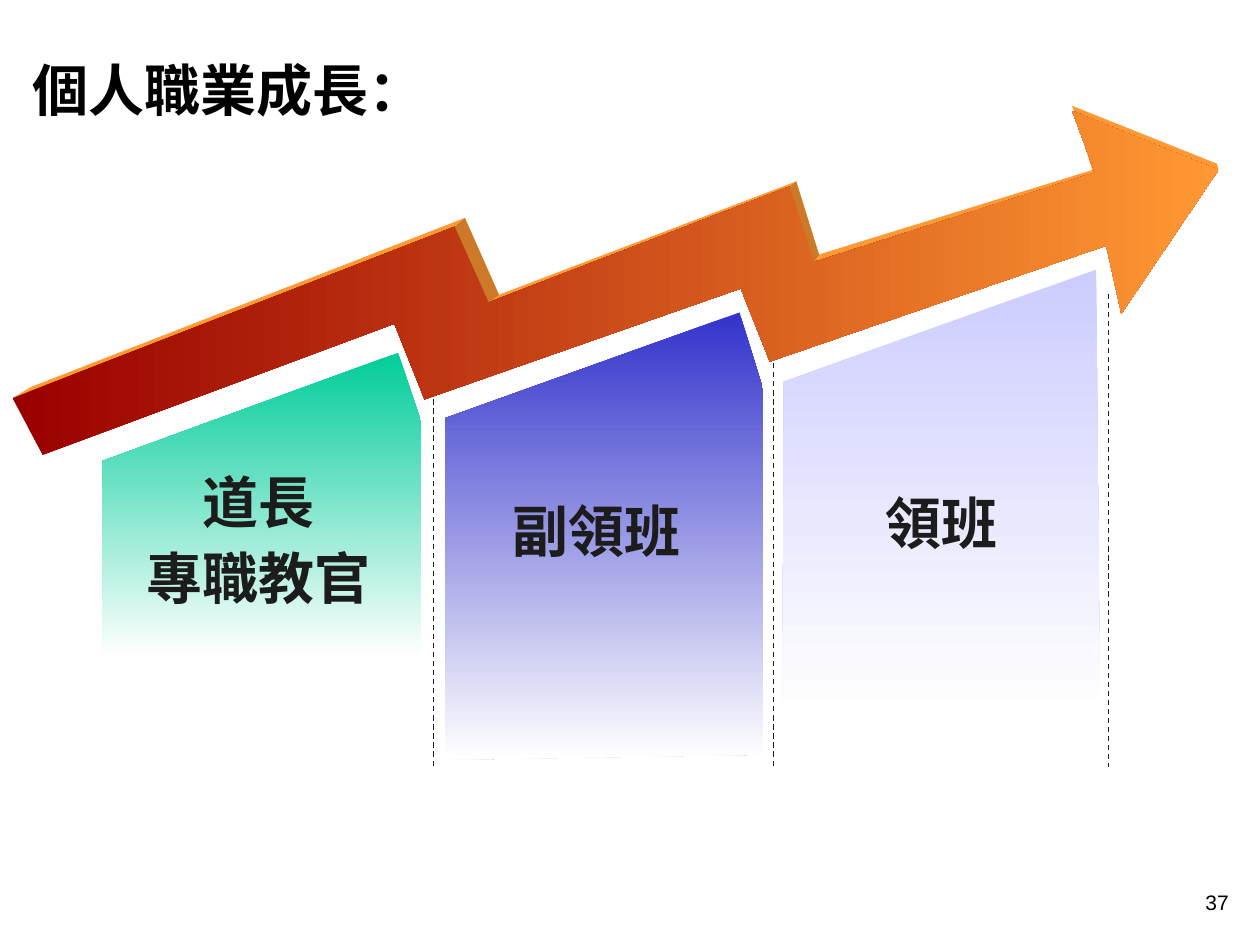
from dataclasses import dataclass

from lxml import etree
from pptx import Presentation
from pptx.dml.color import RGBColor
from pptx.enum.dml import MSO_LINE
from pptx.enum.shapes import MSO_CONNECTOR
from pptx.enum.text import MSO_ANCHOR, PP_ALIGN
from pptx.oxml.ns import qn
from pptx.util import Inches, Pt

DASH = MSO_LINE.DASH
STRAIGHT = MSO_CONNECTOR.STRAIGHT
TOP = MSO_ANCHOR.TOP
LEFT, CENTER = PP_ALIGN.LEFT, PP_ALIGN.CENTER
DOWN, RIGHT = 270, 0


@dataclass(frozen=True)
class Theme:
    font: str = "Arial"
    cjk: str = "Noto Sans CJK TC"
    big: int = 32
    small: int = 12
    black: str = "000000"
    ink: str = "1C1C1C"
    white: str = "FFFFFF"
    green: str = "00CC99"
    blue: str = "3333CC"
    pale: str = "CCCCFF"
    red: str = "990000"
    orange: str = "FF9933"
    brown: str = "CC7A29"


THEME = Theme()


def color(code):
    return RGBColor.from_string(code)


def write(frame, lines, font, size, ink, bold=True, align=LEFT, gap=0):
    frame.word_wrap = True
    frame.vertical_anchor = TOP
    frame.text = "\n".join(lines)
    for i, para in enumerate(frame.paragraphs):
        para.alignment = align
        para.space_before = Pt(gap if i else 0)
        para.font.name = font
        para.font.size = Pt(size)
        para.font.bold = bold
        para.font.color.rgb = color(ink)


def add_text(slide, box, lines, *style, **extra):
    shape = slide.shapes.add_textbox(*map(Inches, box))
    write(shape.text_frame, lines, *style, **extra)


def add_outline(slide, left, top, points, first, last=None, angle=DOWN):
    """Draw a closed outline; points are offsets from left and top."""
    spots = [(Inches(left + x), Inches(top + y)) for x, y in points]
    pen = slide.shapes.build_freeform(*spots[0])
    pen.add_line_segments(spots[1:], close=True)
    shape = pen.convert_to_shape()
    shape.shadow.inherit = False
    shape.line.fill.background()
    if last is None:
        shape.fill.solid()
        shape.fill.fore_color.rgb = color(first)
        return
    shape.fill.gradient()
    shape.fill.gradient_angle = angle
    for stop, code in zip(shape.fill.gradient_stops, (first, last)):
        stop.color.rgb = color(code)


def add_title(slide, box, text):
    title = slide.shapes.title
    title.left, title.top, title.width, title.height = map(Inches, box)
    write(title.text_frame, [text], THEME.font, THEME.big, THEME.black)


def add_stage(slide, left, top, points, tint, label, lines, align=LEFT):
    """Draw one fading panel; label is a box offset from its corner."""
    add_outline(slide, left, top, points, tint, THEME.white)
    x, y, width, height = label
    add_text(slide, (left + x, top + y, width, height), lines,
             THEME.cjk, THEME.big, THEME.ink, align=align, gap=5)


def add_rule(slide, x, top, end):
    rule = slide.shapes.add_connector(
        STRAIGHT, Inches(x), Inches(top), Inches(x), Inches(end))
    rule.line.color.rgb = color(THEME.ink)
    rule.line.width = Pt(0.75)
    rule.line.dash_style = DASH
    etree.SubElement(rule._element.spPr, qn("a:effectLst"))


def add_arrow(slide, left, top):
    """Draw the stepped arrow: lit edge, gradient face, shaded steps."""
    under = [(9.57, 0.51), (8.8, 1.65), (8.68, 1.11), (6.01, 2.03),
             (5.78, 1.45), (3.27, 2.33), (3.03, 1.73), (0.24, 2.77)]
    face = [(0, 2.32), (3.51, 0.96), (3.78, 1.56), (6.17, 0.64),
            (6.36, 1.24), (8.59, 0.53), (8.41, 0.04)]
    edge = [(0, 2.32), (0.15, 2.23), (3.59, 0.89), (3.86, 1.5),
            (6.22, 0.6), (6.4, 1.18), (8.57, 0.51), (8.41, 0),
            (9.56, 0.46)]
    add_outline(slide, left, top, edge + under, THEME.orange)
    add_outline(slide, left, top, face + under,
                THEME.red, THEME.orange, RIGHT)
    for i in (1, 3):
        step = [face[i], edge[i + 1], edge[i + 2], face[i + 1]]
        add_outline(slide, left, top, step, THEME.brown)


def main():
    deck = Presentation()
    deck.slide_width, deck.slide_height = Inches(10), Inches(7.5)
    slide = deck.slides.add_slide(deck.slide_layouts[5])
    add_title(slide, (0.16, 0.39, 8.9, 1.25), "個人職業成長：")

    # Career stages
    add_stage(slide, 6.21, 2.14,
              [(2.49, 0), (2.52, 3.54), (0, 3.54), (0.01, 0.89)],
              THEME.pale, (0.72, 1.69, 1.27, 0.64), ["領班"])
    add_stage(slide, 3.53, 2.48,
              [(2.34, 0), (2.53, 0.62), (2.53, 3.51), (0, 3.55), (0, 0.84)],
              THEME.blue, (0.44, 1.41, 1.73, 0.64), ["副領班"])
    add_stage(slide, 0.81, 2.8,
              [(2.35, 0), (2.53, 0.54), (2.53, 2.41), (0, 2.41), (0, 0.86)],
              THEME.green, (0.25, 0.86, 1.98, 1.25),
              ["道長", "專職教官"], CENTER)

    # Dividers
    for x, top in ((3.44, 2.74), (6.14, 2.74), (8.8, 2.33)):
        add_rule(slide, x, top, 6.09)

    add_arrow(slide, 0.1, 0.84)

    # Page number
    add_text(slide, (9.41, 7.01, 0.5, 0.4), ["37"], THEME.font, THEME.small,
             THEME.black, bold=False, align=CENTER)
    deck.save("out.pptx")


if __name__ == "__main__":
    main()
